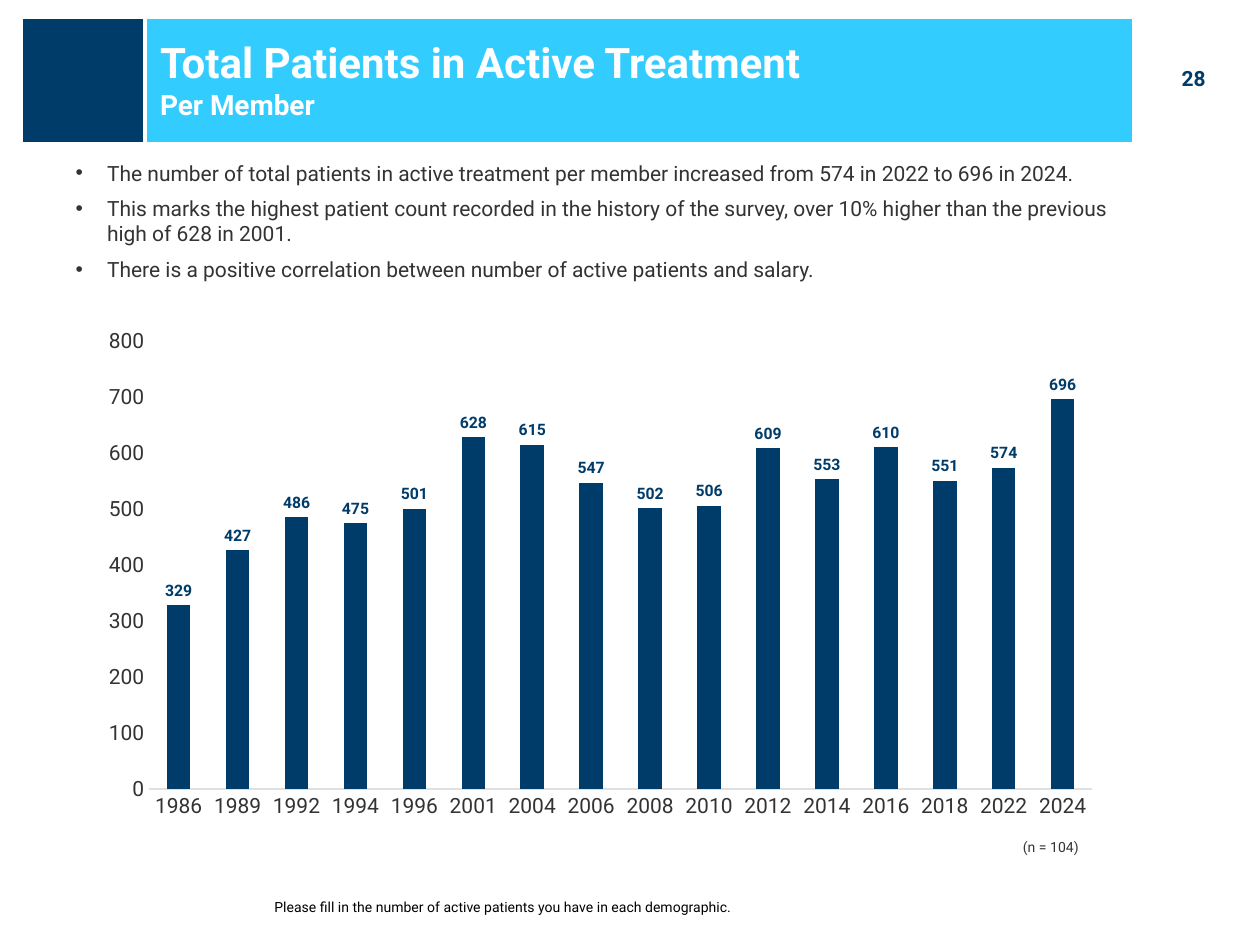
from lxml import etree
from pptx import Presentation
from pptx.chart.data import CategoryChartData
from pptx.dml.color import RGBColor
from pptx.enum.chart import XL_CHART_TYPE, XL_LABEL_POSITION, XL_TICK_MARK
from pptx.enum.shapes import MSO_SHAPE
from pptx.enum.text import MSO_ANCHOR, MSO_AUTO_SIZE, PP_ALIGN
from pptx.oxml import parse_xml
from pptx.oxml.ns import nsdecls, qn
from pptx.util import Inches, Pt

COLUMN = XL_CHART_TYPE.COLUMN_CLUSTERED
OUTSIDE_END = XL_LABEL_POSITION.OUTSIDE_END
NO_TICK = XL_TICK_MARK.NONE
RECTANGLE = MSO_SHAPE.RECTANGLE
MIDDLE, TOP = MSO_ANCHOR.MIDDLE, MSO_ANCHOR.TOP
LEFT, CENTER = PP_ALIGN.LEFT, PP_ALIGN.CENTER
NO_FIT = MSO_AUTO_SIZE.NONE

NAVY = RGBColor(0x00, 0x3C, 0x69)
CYAN = RGBColor(0x33, 0xCC, 0xFF)
GRAY = RGBColor(0x33, 0x33, 0x33)
PALE = RGBColor(0xE0, 0xE0, 0xE0)
WHITE = RGBColor(0xFF, 0xFF, 0xFF)
BLACK = RGBColor(0x00, 0x00, 0x00)
FONT = "Roboto"

TITLE = [("Total Patients in Active Treatment", 24), ("Per Member", 16)]
FINDINGS = [
    "The number of total patients in active treatment per member increased from 574 in 2022 to 696 in 2024.",
    "This marks the highest patient count recorded in the history of the survey, over 10% higher than the previous high of 628 in 2001.",
    "There is a positive correlation between number of active patients and salary.",
]
PATIENTS = {
    "1986": 329, "1989": 427, "1992": 486, "1994": 475,
    "1996": 501, "2001": 628, "2004": 615, "2006": 547,
    "2008": 502, "2010": 506, "2012": 609, "2014": 553,
    "2016": 610, "2018": 551, "2022": 574, "2024": 696,
}
BANDS = [((1, 0.14, 8, 1), CYAN), ((0.17, 0.14, 0.98, 1), NAVY)]
CAPTIONS = [
    ("28", (9.11, 0.47, 0.73, 0.3), 12, NAVY, True, CENTER),
    ("(n = 104)", (8.02, 6.61, 0.79, 0.24), 8, GRAY, False, LEFT),
    ("Please fill in the number of active patients you have in each demographic.",
     (2.08, 7.08, 6.33, 0.24), 8, BLACK, False, LEFT),
]
PLOT_AREA = {"x": 0.063, "y": 0.05, "w": 0.916, "h": 0.857}


def box(bounds):
    return [Inches(length) for length in bounds]


def style(font, size, color, bold=False):
    font.name, font.size, font.bold = FONT, Pt(size), bold
    font.color.rgb = color


def place(placeholder, bounds, anchor):
    placeholder.left, placeholder.top, placeholder.width, placeholder.height = box(bounds)
    frame = placeholder.text_frame
    frame.auto_size = NO_FIT
    frame.word_wrap = True
    frame.vertical_anchor = anchor
    return frame


def add_band(slide, bounds, color):
    band = slide.shapes.add_shape(RECTANGLE, *box(bounds))
    band.shadow.inherit = False
    band.fill.solid()
    band.fill.fore_color.rgb = color
    band.line.color.rgb = WHITE
    band.line.width = Pt(2)
    return band


def fill_title(slide):
    frame = place(slide.shapes.title, (1.17, 0.25, 8.58, 0.75), MIDDLE)
    frame.text = "\n".join(line for line, _ in TITLE)
    for paragraph, (_, size) in zip(frame.paragraphs, TITLE):
        paragraph.alignment = LEFT
        paragraph.space_before = Pt(0)
        style(paragraph.runs[0].font, size, WHITE, True)


def fill_findings(slide):
    frame = place(slide.placeholders[1], (0.5, 1.22, 8.75, 1.11), TOP)
    frame.text = "\n".join(FINDINGS)
    for index, paragraph in enumerate(frame.paragraphs):
        properties = paragraph._p.get_or_add_pPr()
        properties.set("marL", str(Inches(0.25)))
        properties.set("indent", str(-Inches(0.25)))
        etree.SubElement(properties, qn("a:buChar")).set("char", "•")
        paragraph.space_before = Pt(6 if index else 0)
        style(paragraph.runs[0].font, 12, GRAY)


def add_caption(slide, text, bounds, size, color, bold, alignment):
    frame = slide.shapes.add_textbox(*box(bounds)).text_frame
    frame.word_wrap = True
    frame.text = text
    paragraph = frame.paragraphs[0]
    paragraph.alignment = alignment
    style(paragraph.runs[0].font, size, color, bold)


def add_patient_chart(slide):
    chart_data = CategoryChartData()
    chart_data.categories = list(PATIENTS)
    chart_data.add_series("Series 1", list(PATIENTS.values()))
    chart = slide.shapes.add_chart(COLUMN, *box((0.67, 2.5, 8.17, 4.15)), chart_data).chart
    chart.has_legend = chart.has_title = False
    style(chart.font, 10, GRAY)

    years, counts = chart.category_axis, chart.value_axis
    for axis in (years, counts):
        axis.major_tick_mark = axis.minor_tick_mark = NO_TICK
        axis.has_major_gridlines = False
        style(axis.tick_labels.font, 12, GRAY)
    years.format.line.color.rgb = PALE
    years.format.line.width = Pt(0.75)
    counts.format.line.fill.background()
    counts.minimum_scale, counts.maximum_scale, counts.major_unit = 0, 800, 100

    plot = chart.plots[0]
    plot.gap_width, plot.overlap = 150, -27
    plot.vary_by_categories = False
    bars = plot.series[0]
    bars.format.fill.solid()
    bars.format.fill.fore_color.rgb = NAVY
    labels = bars.data_labels
    labels.show_value = True
    labels.position = OUTSIDE_END
    style(labels.font, 9, NAVY, True)

    modes = '<c:layoutTarget val="inner"/><c:xMode val="edge"/><c:yMode val="edge"/>'
    shares = "".join(f'<c:{key} val="{share}"/>' for key, share in PLOT_AREA.items())
    layout = parse_xml(
        f'<c:layout {nsdecls("c")}><c:manualLayout>{modes}{shares}</c:manualLayout></c:layout>'
    )
    plot_area = chart._chartSpace.chart.plotArea
    for previous in plot_area.findall(qn("c:layout")):
        plot_area.remove(previous)
    plot_area.insert(0, layout)


def main():
    presentation = Presentation()
    presentation.slide_width, presentation.slide_height = Inches(10), Inches(7.5)
    slide = presentation.slides.add_slide(presentation.slide_layouts[1])
    bands = [add_band(slide, bounds, color) for bounds, color in BANDS]
    for band in reversed(bands):
        slide.shapes._spTree.insert(2, band._element)
    fill_title(slide)
    fill_findings(slide)
    for caption in CAPTIONS:
        add_caption(slide, *caption)
    add_patient_chart(slide)
    presentation.save("out.pptx")


if __name__ == "__main__":
    main()
